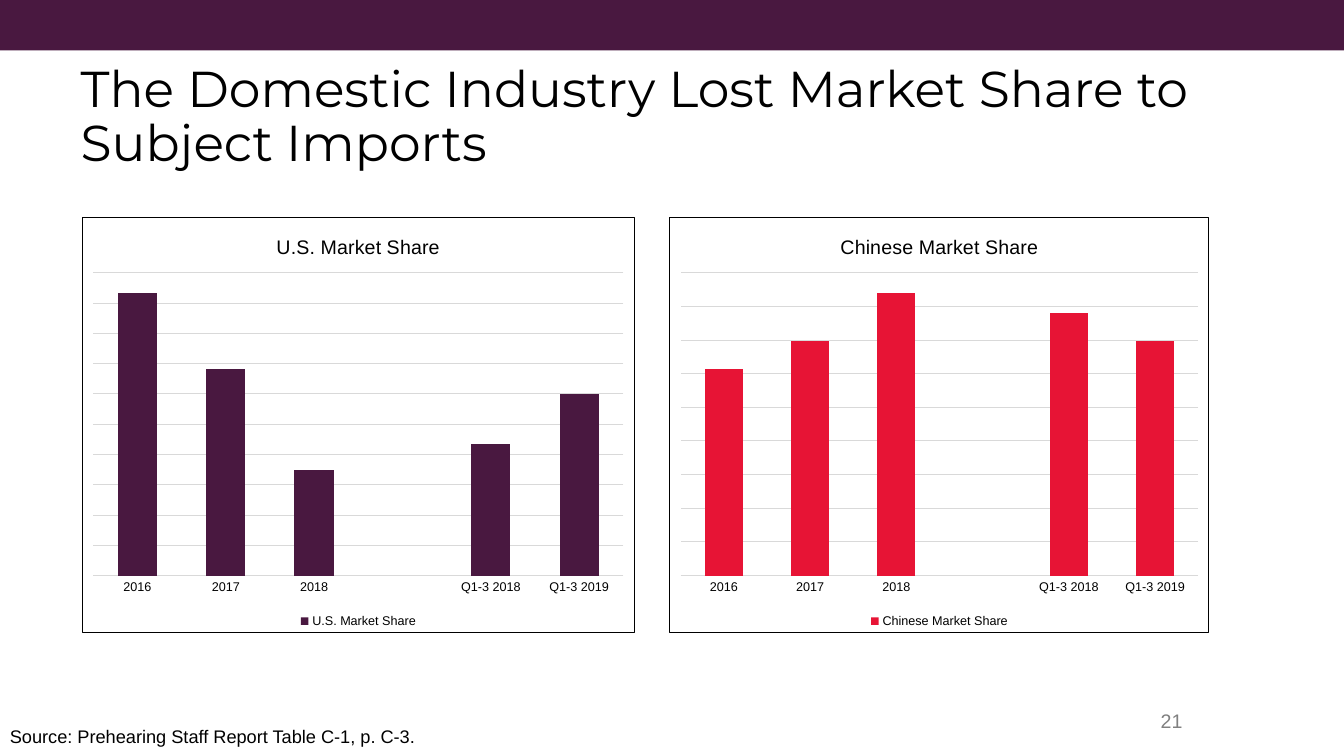
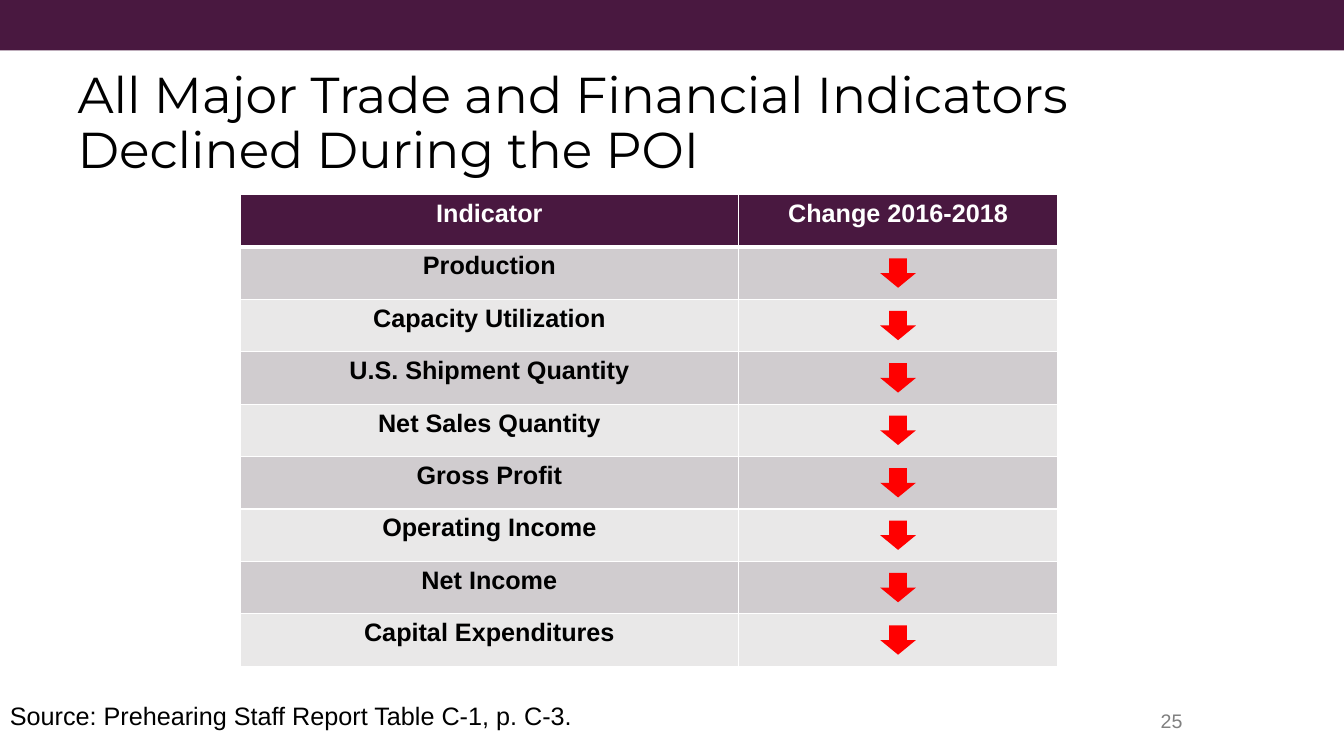
from collections import namedtuple

from lxml import etree
from pptx import Presentation
from pptx.chart.data import CategoryChartData
from pptx.dml.color import RGBColor
from pptx.enum.chart import XL_CHART_TYPE, XL_LEGEND_POSITION, XL_TICK_MARK
from pptx.enum.shapes import MSO_SHAPE
from pptx.enum.text import MSO_ANCHOR, MSO_AUTO_SIZE, PP_ALIGN
from pptx.oxml import parse_xml
from pptx.oxml.ns import nsdecls, qn
from pptx.util import Cm, Pt

PLUM = RGBColor(0x49, 0x18, 0x40)
CRIMSON = RGBColor(0xE7, 0x14, 0x35)
RED = RGBColor(0xFF, 0x00, 0x00)
BLACK = RGBColor(0x00, 0x00, 0x00)
WHITE = RGBColor(0xFF, 0xFF, 0xFF)
GRAY = RGBColor(0x80, 0x80, 0x80)
GRID_GRAY = RGBColor(0xD9, 0xD9, 0xD9)
ROW_SHADES = (RGBColor(0xD0, 0xCC, 0xCF), RGBColor(0xE9, 0xE8, 0xE8))

TITLE_FONT = "Montserrat"
BODY_FONT = "Arial"
SOURCE = "Source: Prehearing Staff Report Table C-1, p. C-3."
PERIODS = ("2016", "2017", "2018", "", "Q1-3 2018", "Q1-3 2019")
INDICATORS = (
    "Production", "Capacity Utilization", "U.S. Shipment Quantity",
    "Net Sales Quantity", "Gross Profit", "Operating Income",
    "Net Income", "Capital Expenditures",
)

Box = namedtuple("Box", "left top width height")
Scale = namedtuple("Scale", "low high step")


def cm_box(left, top, width, height):
    return Box(Cm(left), Cm(top), Cm(width), Cm(height))


NUMBER_BOX = cm_box(26.62, 17.65, 3.43, 1.02)


def style_font(font, size, color=BLACK, name=BODY_FONT, bold=False):
    font.size = Pt(size)
    font.name = name
    font.bold = bold
    font.color.rgb = color


def add_run(paragraph, text, size, **style):
    run = paragraph.add_run()
    run.text = text
    style_font(run.font, size, **style)


def add_block(slide, box, geometry, color):
    block = slide.shapes.add_shape(geometry, *box)
    block.shadow.inherit = False
    block.fill.solid()
    block.fill.fore_color.rgb = color
    block.line.fill.background()
    return block


def add_band(deck, slide):
    band = add_block(slide, Box(0, 0, deck.slide_width, Cm(1.27)),
                     MSO_SHAPE.RECTANGLE, PLUM)
    slide.slide_layout.shapes.element.insert(2, band.element)


def place_title(slide, box, text):
    title = slide.shapes.title
    title.left, title.top, title.width, title.height = box
    frame = title.text_frame
    frame.auto_size = MSO_AUTO_SIZE.NONE
    frame.vertical_anchor = MSO_ANCHOR.MIDDLE
    paragraph = frame.paragraphs[0]
    paragraph.alignment = PP_ALIGN.LEFT
    paragraph.line_spacing = 0.9
    add_run(paragraph, text, 36, name=TITLE_FONT)


def add_label(slide, box, text, size, color=BLACK,
              align=PP_ALIGN.LEFT, anchor=MSO_ANCHOR.TOP):
    frame = slide.shapes.add_textbox(*box).text_frame
    frame.word_wrap = True
    frame.vertical_anchor = anchor
    paragraph = frame.paragraphs[0]
    paragraph.alignment = align
    add_run(paragraph, text, size, color=color)


def add_footer(slide, source_box, source_size, number):
    add_label(slide, source_box, SOURCE, source_size)
    add_label(slide, NUMBER_BOX, number, 14, GRAY, PP_ALIGN.RIGHT, MSO_ANCHOR.MIDDLE)


def frame_chart(chart):
    border = parse_xml(
        f'<c:spPr {nsdecls("c", "a")}><a:noFill/><a:ln w="{Pt(0.75)}">'
        f'<a:solidFill><a:srgbClr val="{BLACK}"/></a:solidFill></a:ln></c:spPr>')
    chart.element.find(qn("c:chart")).addnext(border)


def style_axis_line(line):
    line.color.rgb = GRID_GRAY
    line.width = Pt(0.75)


def add_share_chart(slide, box, name, shares, color, scale):
    share_data = CategoryChartData(number_format="0.0")
    share_data.categories = PERIODS
    share_data.add_series(name, shares)
    chart = slide.shapes.add_chart(
        XL_CHART_TYPE.COLUMN_CLUSTERED, *box, share_data).chart
    style_font(chart.font, 10)
    frame_chart(chart)

    chart.has_title = True
    add_run(chart.chart_title.text_frame.paragraphs[0], name, 14)
    chart.chart_title.include_in_layout = False
    chart.has_legend = True
    chart.legend.position = XL_LEGEND_POSITION.BOTTOM
    chart.legend.include_in_layout = False
    style_font(chart.legend.font, 9)

    periods = chart.category_axis
    periods.major_tick_mark = XL_TICK_MARK.NONE
    style_font(periods.tick_labels.font, 9)
    style_axis_line(periods.format.line)

    levels = chart.value_axis
    levels.minimum_scale, levels.maximum_scale, levels.major_unit = scale
    levels.has_major_gridlines = True
    style_axis_line(levels.major_gridlines.format.line)
    levels.tick_labels.number_format = "0.0"
    levels.tick_labels.number_format_is_linked = False
    levels.visible = False

    plot = chart.plots[0]
    plot.gap_width = 125
    plot.overlap = -27
    plot.vary_by_categories = False
    columns = plot.series[0]
    columns.invert_if_negative = False
    columns.format.fill.solid()
    columns.format.fill.fore_color.rgb = color


def set_borders(cell, bottom=1, top=1):
    properties = cell._tc.get_or_add_tcPr()
    edges = (("lnL", 1), ("lnR", 1), ("lnT", top), ("lnB", bottom))
    for position, (edge, width) in enumerate(edges):
        line = etree.Element(qn(f"a:{edge}"), w=str(Pt(width)))
        fill = etree.SubElement(line, qn("a:solidFill"))
        etree.SubElement(fill, qn("a:srgbClr"), val=str(WHITE))
        properties.insert(position, line)


def fill_cell(cell, text, shade, color):
    cell.fill.solid()
    cell.fill.fore_color.rgb = shade
    paragraph = cell.text_frame.paragraphs[0]
    paragraph.alignment = PP_ALIGN.CENTER
    if text:
        add_run(paragraph, text, 18, color=color, bold=True)


def add_indicator_table(slide, box):
    rows = [("Indicator", "Change 2016-2018")] + [(name, "") for name in INDICATORS]
    table = slide.shapes.add_table(len(rows), 2, *box).table
    name_width = int(box.width * 0.61)
    change_width = box.width - name_width
    table.columns[0].width = name_width
    table.columns[1].width = change_width
    row_height = box.height // len(rows)
    arrow_width, arrow_height = Cm(0.9), Cm(0.74)
    arrow_left = box.left + name_width + (change_width - arrow_width) // 2

    for index, texts in enumerate(rows):
        header = index == 0
        table.rows[index].height = row_height
        shade = PLUM if header else ROW_SHADES[(index - 1) % 2]
        for column, text in enumerate(texts):
            cell = table.cell(index, column)
            fill_cell(cell, text, shade, WHITE if header else BLACK)
            set_borders(cell, bottom=3 if header else 1, top=3 if index == 1 else 1)
        if not header:
            arrow_top = box.top + index * row_height + (row_height - arrow_height) // 2
            add_block(slide, Box(arrow_left, arrow_top, arrow_width, arrow_height),
                      MSO_SHAPE.DOWN_ARROW, RED)


def build_share_slide(slide):
    place_title(slide, cm_box(1.78, 1.27, 30.38, 3.43),
                "The Domestic Industry Lost Market Share to Subject Imports")
    add_share_chart(slide, cm_box(2.06, 5.46, 13.94, 10.49), "U.S. Market Share",
                    (100, 97, 93, None, 94, 96), PLUM, Scale(88.8, 100.8, 1.2))
    add_share_chart(slide, cm_box(16.87, 5.46, 13.61, 10.49), "Chinese Market Share",
                    (73, 83, 100, None, 93, 83), CRIMSON, Scale(0, 107.1, 11.9))
    add_footer(slide, cm_box(0, 18.16, 29.5, 0.81), 13, "21")


def build_indicator_slide(slide):
    place_title(slide, cm_box(1.7, 1.83, 30.48, 2.62),
                "All Major Trade and Financial Indicators Declined During the POI")
    add_indicator_table(slide, cm_box(6.05, 4.9, 20.6, 11.89))
    add_footer(slide, cm_box(0, 17.53, 18.24, 1.02), 18, "25")


def main():
    deck = Presentation()
    deck.slide_width, deck.slide_height = Cm(33.87), Cm(19.05)
    title_only = deck.slide_layouts[5]
    share_slide = deck.slides.add_slide(title_only)
    add_band(deck, share_slide)
    build_share_slide(share_slide)
    build_indicator_slide(deck.slides.add_slide(title_only))
    deck.save("out.pptx")


if __name__ == "__main__":
    main()
